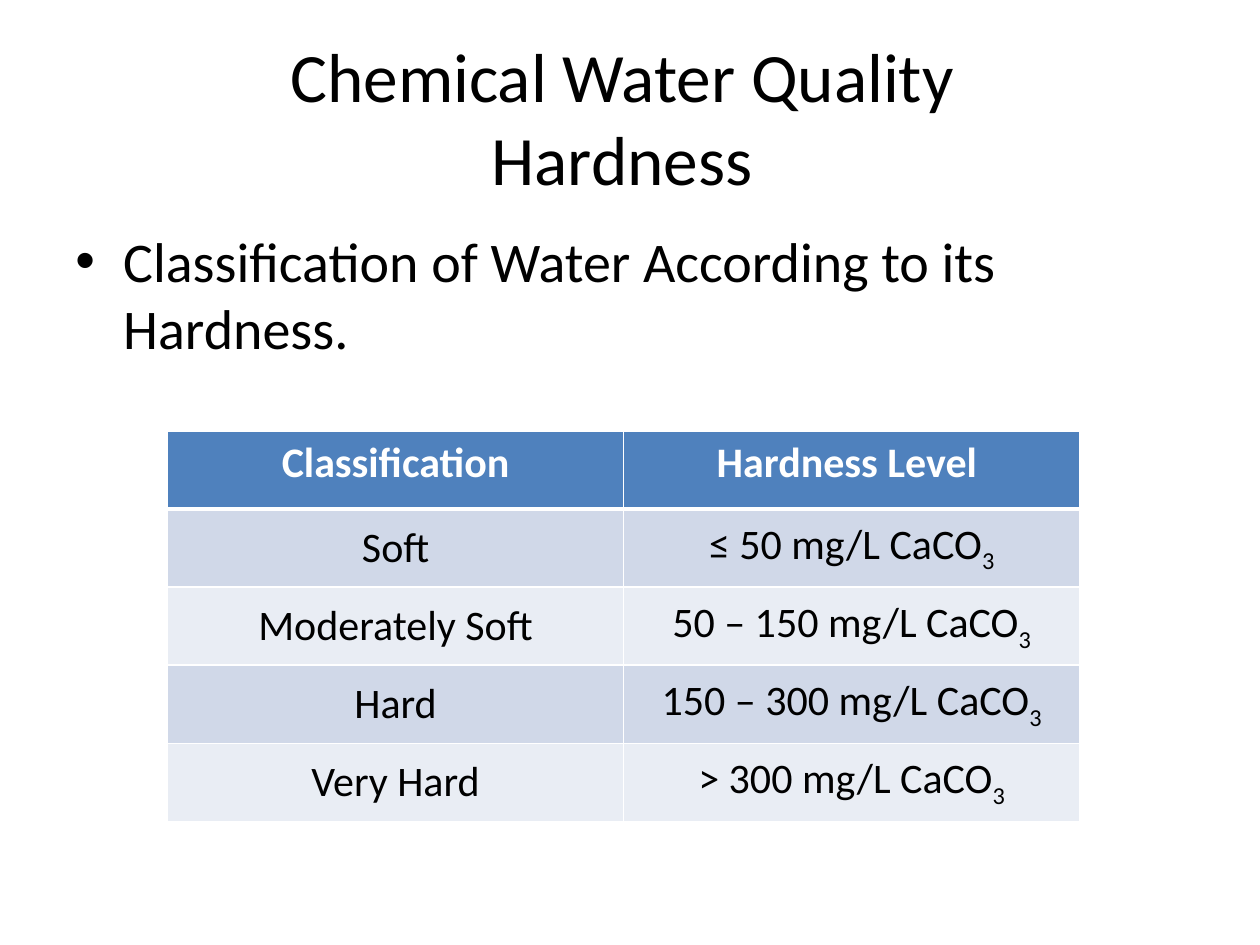
import dataclasses

import pptx
import pptx.dml.color
import pptx.enum.text
import pptx.oxml
import pptx.oxml.ns
import pptx.util

Pt = pptx.util.Pt
Inches = pptx.util.Inches
RGB = pptx.dml.color.RGBColor.from_string
Anchor = pptx.enum.text.MSO_ANCHOR
Align = pptx.enum.text.PP_ALIGN

COLORS = {
    "text": "000000",
    "header": "4F81BD",
    "odd": "D0D8E8",
    "even": "E9EDF4",
    "white": "FFFFFF",
}
MARGIN = 0.5
INDENT = 0.38
TABLE_LEFT, TABLE_TOP = 1.33, 3.42
COLUMN_WIDTH, ROW_HEIGHT = 3.62, 0.62


@dataclasses.dataclass
class HardnessClass:
    name: str
    level: str


CLASSES = [
    HardnessClass("Soft", "≤ 50 mg/L CaCO"),
    HardnessClass("Moderately Soft", "50 – 150 mg/L CaCO"),
    HardnessClass("Hard", "150 – 300 mg/L CaCO"),
    HardnessClass("Very Hard", "> 300 mg/L CaCO"),
]


def add_span(para, text: str, size: float, color: str = "text",
             bold: bool = False, baseline: int = 0) -> None:
    """Append text to a paragraph; baseline is a percentage, negative for subscript."""
    span = para.add_run()
    span.text = text
    formats = {"name": "Calibri", "size": Pt(size), "bold": bold}
    for attribute, value in formats.items():
        setattr(span.font, attribute, value)
    span.font.color.rgb = RGB(COLORS[color])
    if baseline:
        span.font._element.set("baseline", str(baseline * 1000))


def add_text_frame(page, top: float, height: float, anchor):
    """Add a box between the side margins and return its text frame."""
    box = page.shapes.add_textbox(
        Inches(MARGIN), Inches(top), Inches(10 - 2 * MARGIN), Inches(height))
    frame = box.text_frame
    frame.word_wrap = True
    frame.vertical_anchor = anchor
    return frame


def add_title(page, lines: list[str]) -> None:
    para = add_text_frame(page, 0.3, 1.25, Anchor.MIDDLE).paragraphs[0]
    para.alignment = Align.CENTER
    for number, line in enumerate(lines):
        if number:
            para.add_line_break()
        add_span(para, line, 39.6)


def add_bullet(page, text: str) -> None:
    para = add_text_frame(page, 1.75, 4.95, Anchor.TOP).paragraphs[0]
    para.space_before = Pt(6.4)
    add_span(para, text, 32)
    properties = para._p.get_or_add_pPr()
    properties.set("marL", str(Inches(INDENT)))
    properties.set("indent", str(-Inches(INDENT)))
    namespace = pptx.oxml.ns.nsdecls("a")
    for markup in (f'<a:buFont {namespace} typeface="Arial"/>',
                   f'<a:buChar {namespace} char="•"/>'):
        properties.append(pptx.oxml.parse_xml(markup))


def set_borders(cell, top: float, bottom: float) -> None:
    """Draw white cell borders; widths are in points."""
    properties = cell._tc.get_or_add_tcPr()
    widths = {"lnL": 1, "lnR": 1, "lnT": top, "lnB": bottom}
    for place, (side, width) in enumerate(widths.items()):
        properties.insert(place, pptx.oxml.parse_xml(
            f'<a:{side} {pptx.oxml.ns.nsdecls("a")} w="{Pt(width)}"><a:solidFill>'
            f'<a:srgbClr val="{COLORS["white"]}"/></a:solidFill></a:{side}>'))


def format_cell(cell, fill: str, anchor, top: float, bottom: float):
    """Style a cell and return its centred paragraph."""
    cell.fill.solid()
    cell.fill.fore_color.rgb = RGB(COLORS[fill])
    cell.vertical_anchor = anchor
    set_borders(cell, top, bottom)
    para = cell.text_frame.paragraphs[0]
    para.alignment = Align.CENTER
    return para


def add_hardness_table(page) -> None:
    rows = len(CLASSES) + 1
    table = page.shapes.add_table(
        rows, 2, Inches(TABLE_LEFT), Inches(TABLE_TOP),
        Inches(2 * COLUMN_WIDTH), Inches(rows * ROW_HEIGHT)).table
    for column, heading in enumerate(["Classification", "Hardness Level "]):
        para = format_cell(table.cell(0, column), "header", Anchor.TOP, 1, 3)
        add_span(para, heading, 24, "white", bold=True)
    for row, hardness in enumerate(CLASSES, start=1):
        fill = "odd" if row % 2 else "even"
        top = 3 if row == 1 else 1
        name, level = (
            format_cell(table.cell(row, column), fill, Anchor.MIDDLE, top, 1)
            for column in range(2))
        add_span(name, hardness.name, 24)
        add_span(level, hardness.level, 24)
        add_span(level, "3", 24, baseline=-25)


def main() -> None:
    deck = pptx.Presentation()
    deck.slide_width, deck.slide_height = Inches(10), Inches(7.5)
    page = deck.slides.add_slide(deck.slide_layouts[6])
    add_title(page, ["Chemical Water Quality ", "Hardness "])
    add_bullet(page, "Classification of Water According to its Hardness.")
    add_hardness_table(page)
    deck.save("out.pptx")


if __name__ == "__main__":
    main()
